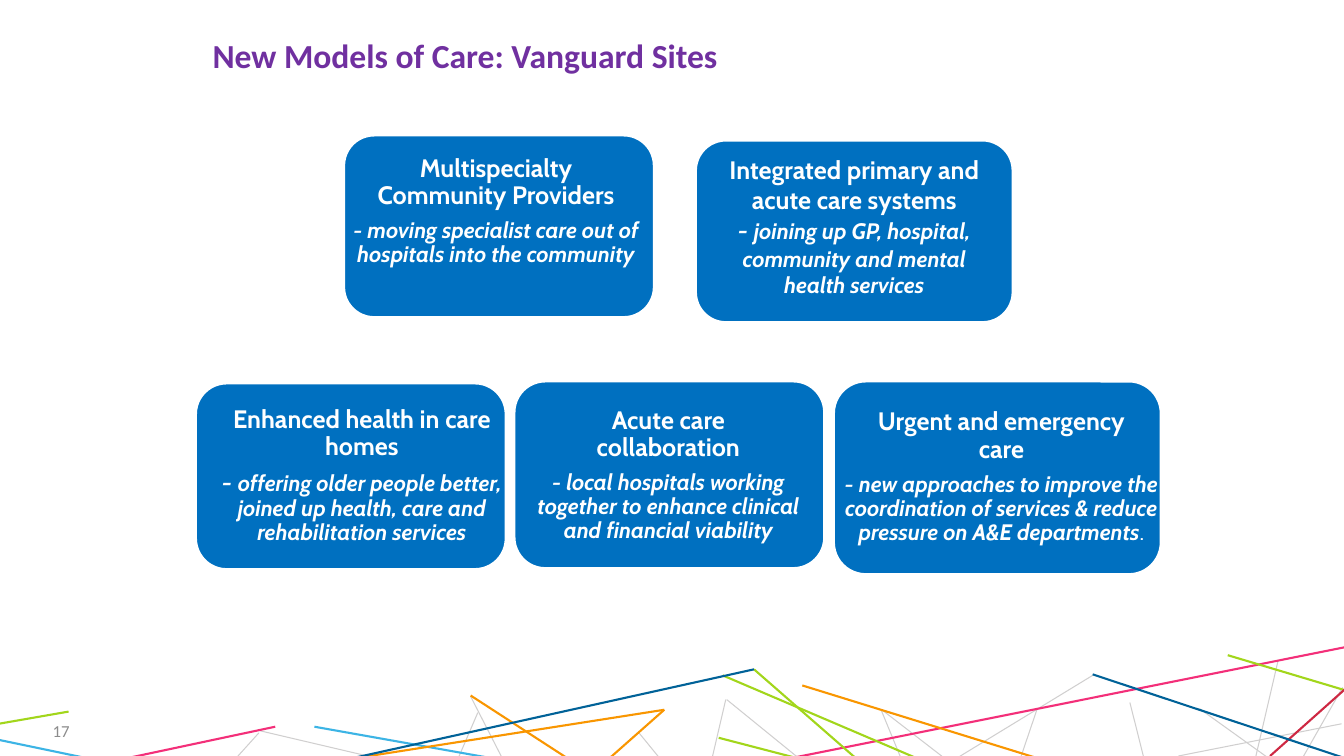
from lxml import etree
from pptx import Presentation
from pptx.dml.color import RGBColor
from pptx.enum.shapes import MSO_CONNECTOR, MSO_SHAPE
from pptx.enum.text import MSO_ANCHOR, PP_ALIGN
from pptx.oxml.ns import qn
from pptx.util import Pt

STRAIGHT = MSO_CONNECTOR.STRAIGHT
ROUNDED = MSO_SHAPE.ROUNDED_RECTANGLE
TOP, MIDDLE = MSO_ANCHOR.TOP, MSO_ANCHOR.MIDDLE
LEFT, CENTER, RIGHT = PP_ALIGN.LEFT, PP_ALIGN.CENTER, PP_ALIGN.RIGHT

WHITE, BLUE, PURPLE = "FFFFFF", "0070C0", "7030A0"
PALE_GREY, NUMBER_GREY = "D0CFCF", "8C8C8C"


def color(hex_string):
    return RGBColor.from_string(hex_string)


def style_run(run, font_name, size, hex_string, bold=False, italic=False):
    font = run.font
    font.name, font.size = font_name, Pt(size)
    font.bold, font.italic = bold, italic
    font.color.rgb = color(hex_string)


presentation = Presentation()
presentation.slide_width, presentation.slide_height = Pt(960), Pt(540)
slide = presentation.slides.add_slide(presentation.slide_layouts[6])

# Decorative lines along the foot: colour -> (x1, y1, x2, y2)
foot_lines = {
    PALE_GREY: [
        (913, 471.6, 896.4, 543), (630.7, 507.6, 697.7, 559.4),
        (629.3, 506.9, 653, 564.5), (740.9, 506.2, 725.8, 550.8),
        (780.5, 482.4, 669.6, 550), (958.3, 517, 841.7, 540),
        (959, 491, 929.5, 543), (856.8, 506.2, 931, 559.4),
        (185, 523.4, 151.2, 560.9), (185.8, 522, 314.6, 552.2),
        (341.3, 509, 317.5, 564.5), (336.2, 497.5, 367.9, 559.4),
        (455.8, 522.7, 484.6, 558), (519.1, 499.7, 596.9, 563),
        (518.4, 499.7, 501.8, 571), (807.1, 501.8, 820.8, 556.6),
    ],
    "F32F79": [(196.6, 519.1, 60.5, 548), (979.2, 458.6, 475.9, 559.4)],
    "3CB4E5": [(-8, 527, 147.6, 559.4), (224.6, 519.1, 451.4, 559.4)],
    "F99600": [
        (336.2, 496.8, 440.6, 564.5), (474.5, 507, 149, 558),
        (474.5, 507, 417.6, 557.3), (573.1, 489.6, 796.3, 558.7),
    ],
    "A2D61B": [
        (49, 508.3, -13, 519.1), (538.6, 478.1, 629.3, 557.3),
        (513.4, 527, 630, 557.3), (973.4, 496.8, 877, 468),
        (516.2, 482.4, 659.5, 543.6),
    ],
    "CE2843": [(960.5, 492.5, 907.2, 540)],
    "006298": [(780.5, 481.7, 962.6, 542.2), (538.6, 478.1, 180.7, 557.3)],
}
for line_color, segments in foot_lines.items():
    for segment in segments:
        connector = slide.shapes.add_connector(STRAIGHT, *map(Pt, segment))
        connector.line.color.rgb = color(line_color)
        connector.line.width = Pt(0.75 if line_color == PALE_GREY else 1.5)
        etree.SubElement(connector._element.spPr, qn("a:effectLst"))

# Slide number and title: text, box, size, colour, bold, alignment
labels = [
    ("17", (11.5, 507.6, 45.4, 28.8), 12, NUMBER_GREY, False, RIGHT),
    ("New Models of Care: Vanguard Sites", (144.7, 13, 579.6, 52.6),
     24, PURPLE, True, LEFT),
]
for text, box, size, text_color, bold, alignment in labels:
    frame = slide.shapes.add_textbox(*map(Pt, box)).text_frame
    frame.word_wrap, frame.vertical_anchor = True, MIDDLE
    frame.text = text
    frame.paragraphs[0].alignment = alignment
    style_run(frame.paragraphs[0].runs[0], "Calibri", size, text_color, bold)

# Care models: card, separate text box (None: text sits in the card),
# heading, size of the dash, description, closing mark
care_models = [
    ((245.5, 96.5, 221.8, 130.3), (243.4, 82.8, 221.8, 136.1),
     "Multispecialty\nCommunity Providers", 16,
     "moving specialist care out of hospitals into the community", ""),
    ((496.8, 100.1, 226.8, 130.3), None,
     "Integrated primary and acute care systems", 18,
     "joining up GP, hospital, community and mental health services", ""),
    ((139.7, 273.6, 221.8, 133.2), (139.7, 279.4, 237.6, 121),
     "Enhanced health in care homes", 18,
     "offering older people better, joined up health, care and "
     "rehabilitation services", ""),
    ((367.2, 272.2, 221.8, 133.9), (366.5, 267.8, 221.8, 144),
     "Acute care\ncollaboration", 16,
     "local hospitals working together to enhance clinical and "
     "financial viability", ""),
    ((595.4, 272.2, 234, 138.2), (595.4, 270, 239.8, 141.8),
     "Urgent and emergency\ncare", 16,
     "new approaches to improve the coordination of services & reduce "
     "pressure on A&E departments", "."),
]
for card_box, text_box, heading, dash_size, description, mark in care_models:
    card = slide.shapes.add_shape(ROUNDED, *map(Pt, card_box))
    card.shadow.inherit = False
    card.fill.solid()
    card.fill.fore_color.rgb = color(BLUE)
    card.line.color.rgb = color(WHITE)
    card.line.width = Pt(2)

    holder = slide.shapes.add_textbox(*map(Pt, text_box)) if text_box else card
    frame = holder.text_frame
    frame.word_wrap = True
    frame.vertical_anchor = MIDDLE if text_box else TOP
    frame.text = ""
    title, detail = frame.paragraphs[0], frame.add_paragraph()
    title.text = heading
    for run in title.runs:
        style_run(run, "Cabin", 18, WHITE, bold=True)
    for text, size, strong in [("- ", dash_size, True),
                               (description, 16, True), (mark, 16, False)]:
        if text:
            run = detail.add_run()
            run.text = text
            style_run(run, "Cabin", size, WHITE, bold=strong, italic=strong)
    for paragraph in (title, detail):
        paragraph.alignment = CENTER
        if text_box:
            paragraph.line_spacing = 0.9
            paragraph.space_after = Pt(6.5)

presentation.save("out.pptx")
